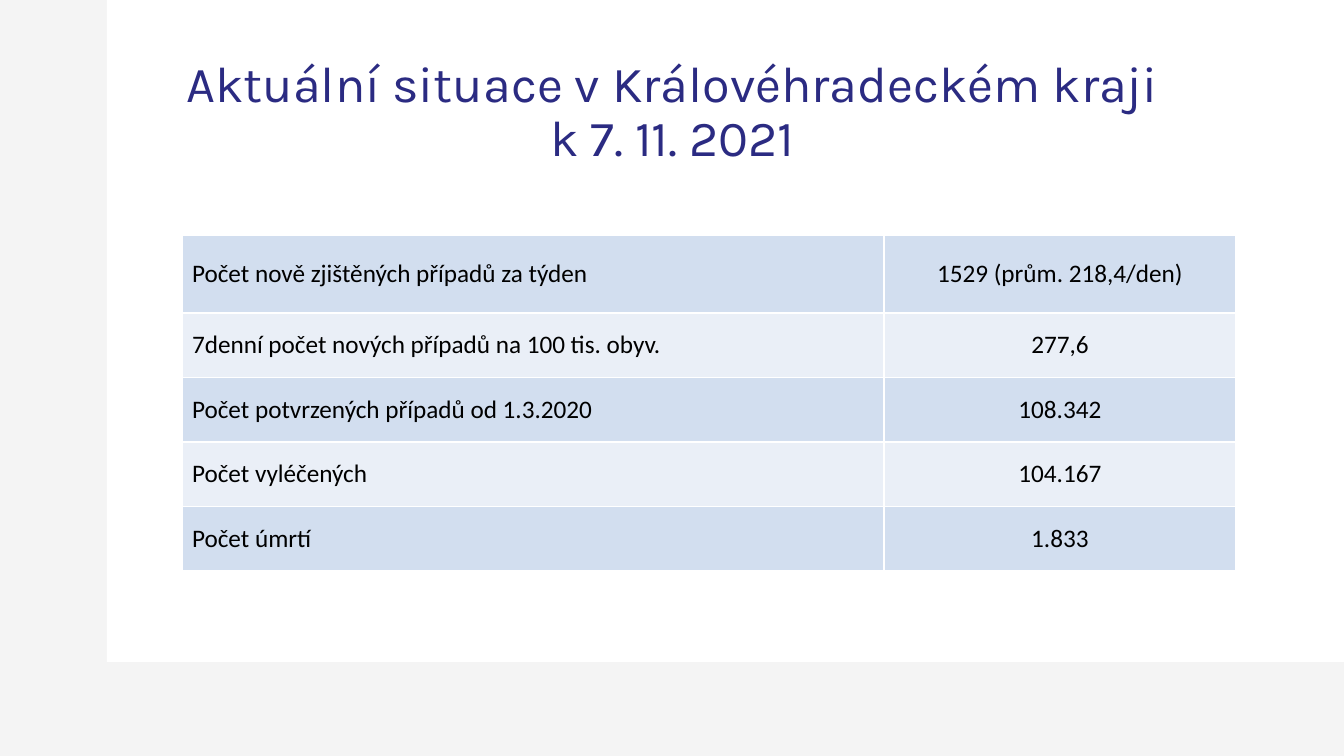
from lxml.etree import SubElement
from pptx import Presentation
from pptx.dml.color import RGBColor
from pptx.enum.shapes import MSO_SHAPE as Shape
from pptx.enum.text import MSO_ANCHOR as Anchor, PP_ALIGN as Align
from pptx.oxml.ns import qn
from pptx.util import Pt

TITLE = "Aktuální situace v Královéhradeckém kraji\nk 7. 11. 2021"
FIGURES = [
    ("Počet nově zjištěných případů za týden", "1529 (prům. 218,4/den)"),
    ("7denní počet nových případů na 100 tis. obyv.", "277,6"),
    ("Počet potvrzených případů od 1.3.2020", "108.342"),
    ("Počet vyléčených", "104.167"),
    ("Počet úmrtí", "1.833"),
]
BANDS = ("D2DEEF", "EAEFF7")
ALIGNS = (Align.LEFT, Align.CENTER)

SLIDE = (1344, 756)
PANEL = (107, 0, 1237, 662)
TITLE_BOX = (93, 40, 1159, 146)
TABLE = (182, 235, 1054, 336)
LABEL_WIDTH = 702
FIRST_ROW = 78


def px(length):
    return round(length * 914400 / 100.8)


def place(box):
    return [px(length) for length in box]


def paint(fill, color):
    fill.solid()
    fill.fore_color.rgb = RGBColor.from_string(color)


def write(paragraph, text, font, size, color, align):
    paragraph.text = text
    paragraph.alignment = align
    paragraph.font.name = font
    paragraph.font.size = Pt(size)
    paragraph.font.color.rgb = RGBColor.from_string(color)


def add_borders(cell, color):
    """Draw a 1 pt line on all four sides; call before filling the cell."""
    properties = cell._tc.get_or_add_tcPr()
    for side in ("lnL", "lnR", "lnT", "lnB"):
        line = SubElement(properties, qn(f"a:{side}"), w=str(Pt(1)))
        solid = SubElement(line, qn("a:solidFill"))
        SubElement(solid, qn("a:srgbClr"), val=color)


def add_panel(slide):
    paint(slide.background.fill, "F4F4F4")
    panel = slide.shapes.add_shape(Shape.RECTANGLE, *place(PANEL))
    panel.shadow.inherit = False
    paint(panel.fill, "FFFFFF")
    panel.line.fill.background()


def add_title(slide):
    frame = slide.shapes.add_textbox(*place(TITLE_BOX)).text_frame
    frame.word_wrap = True
    frame.vertical_anchor = Anchor.MIDDLE
    heading = frame.paragraphs[0]
    write(heading, TITLE, "Karla", 36, "2B2B82", Align.CENTER)
    heading.line_spacing = 0.9


def add_figures(slide):
    width, height = TABLE[2:]
    count = len(FIGURES)
    table = slide.shapes.add_table(count, 2, *place(TABLE)).table
    table.first_row = False
    table.columns[0].width = px(LABEL_WIDTH)
    table.columns[1].width = px(width - LABEL_WIDTH)
    other_row = (height - FIRST_ROW) / (count - 1)
    for r, figure in enumerate(FIGURES):
        table.rows[r].height = px(other_row if r else FIRST_ROW)
        for c, text in enumerate(figure):
            cell = table.cell(r, c)
            cell.vertical_anchor = Anchor.MIDDLE
            add_borders(cell, "FFFFFF")
            paint(cell.fill, BANDS[r % 2])
            write(cell.text_frame.paragraphs[0], text, "Calibri", 18, "000000", ALIGNS[c])


def main():
    deck = Presentation()
    deck.slide_width, deck.slide_height = place(SLIDE)
    slide = deck.slides.add_slide(deck.slide_layouts[6])
    add_panel(slide)
    add_title(slide)
    add_figures(slide)
    deck.save("out.pptx")


if __name__ == "__main__":
    main()
